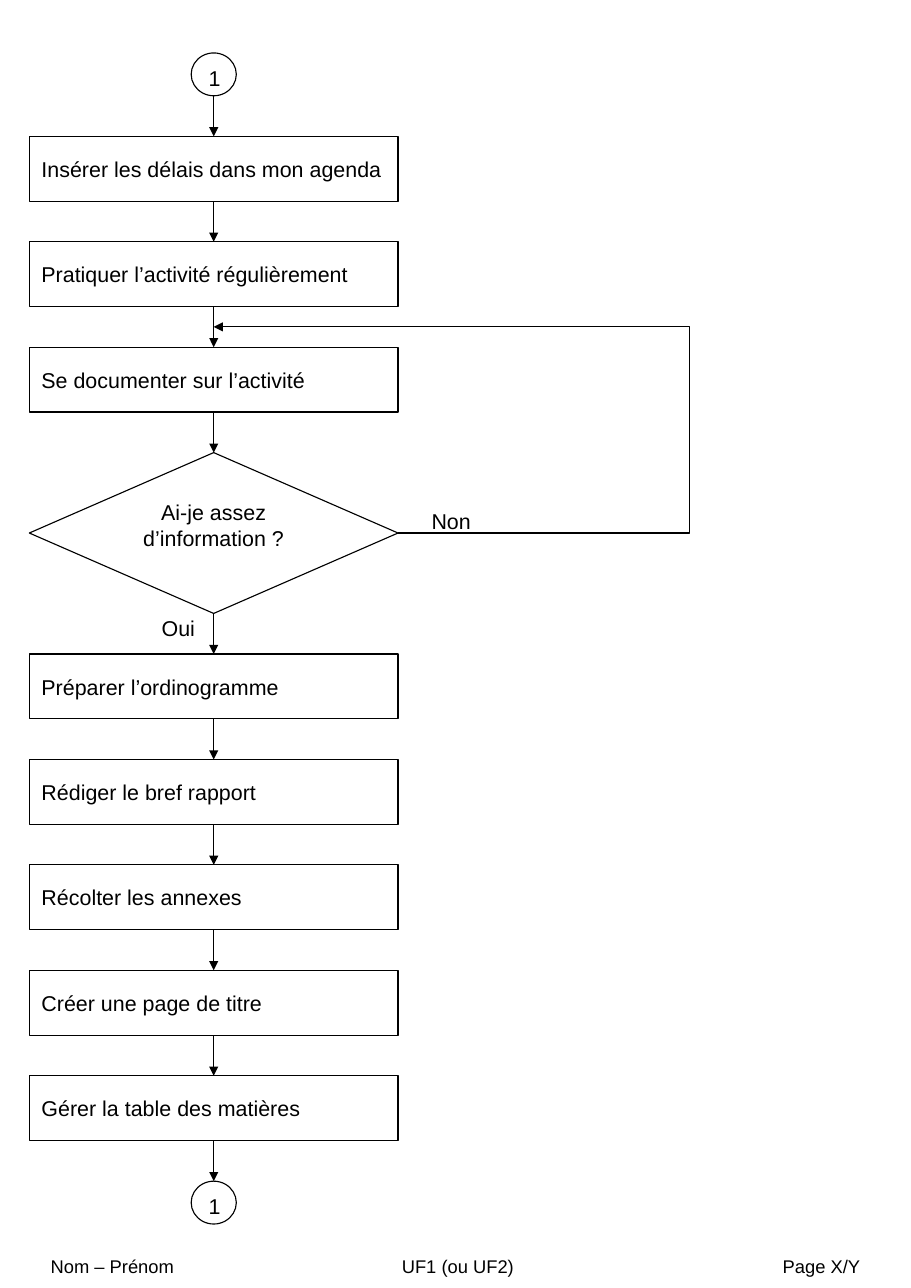
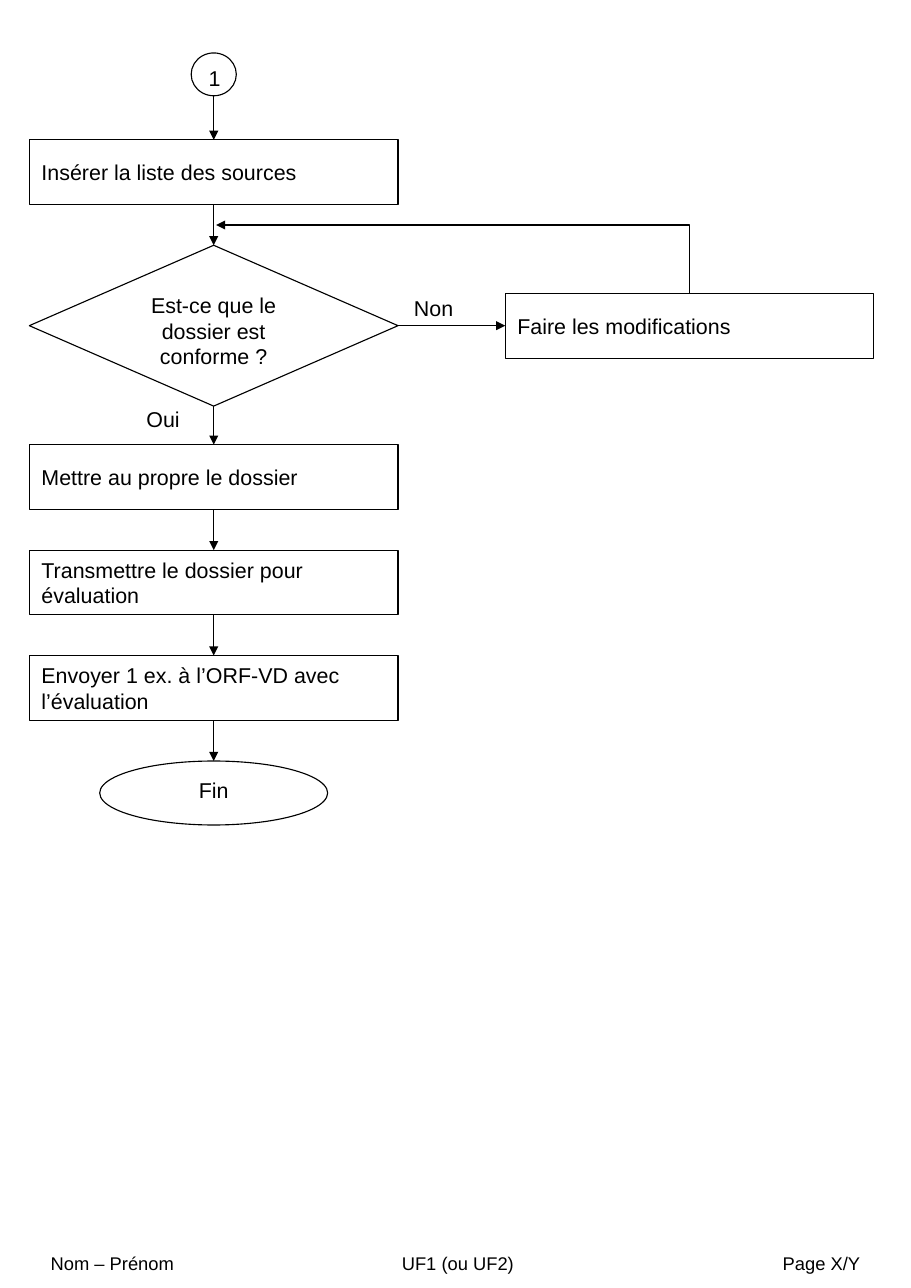
from lxml import etree
from pptx import Presentation
from pptx.dml.color import RGBColor
from pptx.enum import shapes, text
from pptx.oxml.ns import qn
from pptx.util import Pt

BLACK = RGBColor(0, 0, 0)
WHITE = RGBColor(255, 255, 255)
FONT = "Arial"
CENTER = 139.7          # axis of the main flow
GAP = 26.5              # usual distance between two steps
LOOP_X = 450.7          # vertical part of the return loops
BOX_W, BOX_H = 241, 42.4

S = shapes.MSO_SHAPE
# kind: preset, width, height, alignment, anchor, wide insets
KINDS = {
    "link": (S.FLOWCHART_CONNECTOR, 29.5, 28, text.PP_ALIGN.CENTER, text.MSO_ANCHOR.TOP, False),
    "box": (S.RECTANGLE, BOX_W, BOX_H, text.PP_ALIGN.LEFT, text.MSO_ANCHOR.MIDDLE, True),
    "test": (S.FLOWCHART_DECISION, BOX_W, 105.1, text.PP_ALIGN.CENTER, text.MSO_ANCHOR.TOP, True),
    "end": (S.OVAL, 149, 41.8, text.PP_ALIGN.CENTER, text.MSO_ANCHOR.TOP, True),
}

# Each step: kind, wording, distance from the step above
PAGES = [
    {
        "steps": [
            ("link", "1", 34.6),
            ("box", "Insérer les délais dans mon agenda", GAP),
            ("box", "Pratiquer l’activité régulièrement", GAP),
            ("box", "Se documenter sur l’activité", GAP),
            ("test", "Ai-je assez d’information ?", GAP),
            ("box", "Préparer l’ordinogramme", GAP),
            ("box", "Rédiger le bref rapport", GAP),
            ("box", "Récolter les annexes", GAP),
            ("box", "Créer une page de titre", GAP),
            ("box", "Gérer la table des matières", GAP),
            ("link", "1", GAP),
        ],
        "labels": [("Oui", 98.6, 398.2), ("Non", 275, 328.3)],
        "footer_top": 812.2,
    },
    {
        "steps": [
            ("link", "1", 34.6),
            ("box", "Insérer la liste des sources", 28.8),
            ("test", "Est-ce que le dossier est conforme ?", GAP),
            ("box", "Mettre au propre le dossier", 25.2),
            ("box", "Transmettre le dossier pour évaluation", GAP),
            ("box", "Envoyer 1 ex. à l’ORF-VD avec l’évaluation", GAP),
            ("end", "Fin", GAP),
        ],
        "labels": [("Oui", 88.6, 262.1), ("Non", 263.5, 189.4)],
        "footer_top": 810.7,
    },
]


def add_text(sp, wording, size=14, align=text.PP_ALIGN.LEFT,
             anchor=text.MSO_ANCHOR.TOP, wide=False):
    tf = sp.text_frame
    tf.word_wrap = True
    tf.vertical_anchor = anchor
    if wide:
        tf.margin_left = tf.margin_right = Pt(7.9)
        tf.margin_top = tf.margin_bottom = Pt(4.3)
    p = tf.paragraphs[0]
    p.text = wording
    p.alignment = align
    p.font.name, p.font.size = FONT, Pt(size)
    p.font.color.rgb = BLACK
    return p


def add_arrow(s, kind, x1, y1, x2, y2):
    c = s.shapes.add_connector(kind, Pt(x1), Pt(y1), Pt(x2), Pt(y2))
    c.line.color.rgb = BLACK
    c.line.width = Pt(0.75)
    etree.SubElement(c.line._get_or_add_ln(), qn("a:tailEnd"), type="triangle")
    etree.SubElement(c._element.spPr, qn("a:effectLst"))
    return c


prs = Presentation()
prs.slide_width, prs.slide_height = Pt(595.44), Pt(841.68)
STRAIGHT, ELBOW = shapes.MSO_CONNECTOR.STRAIGHT, shapes.MSO_CONNECTOR.ELBOW

flows = []
for page in PAGES:
    s = prs.slides.add_slide(prs.slide_layouts[6])

    # Steps down the axis, plus the correction box beside the second page's test
    places = []
    y = 0
    for kind, wording, gap in page["steps"]:
        y += gap
        places.append((kind, wording, CENTER, y))
        y += KINDS[kind][2]
    if page is PAGES[1]:
        test_y = places[2][3] + KINDS["test"][2] / 2
        places.append(("box", "Faire les modifications", LOOP_X, test_y - BOX_H / 2))

    nodes = []
    for kind, wording, x, top in places:
        preset, w, h, align, anchor, wide = KINDS[kind]
        sp = s.shapes.add_shape(preset, Pt(x - w / 2), Pt(top), Pt(w), Pt(h))
        sp.shadow.inherit = False
        sp.fill.solid()
        sp.fill.fore_color.rgb = WHITE
        sp.line.color.rgb = BLACK
        sp.line.width = Pt(0.75)
        add_text(sp, wording, 14, align, anchor, wide)
        nodes.append(sp)
    flows.append((s, nodes))

    # Arrows between consecutive steps
    for i in range(1, len(page["steps"])):
        above, below = nodes[i - 1], nodes[i]
        c = add_arrow(s, STRAIGHT, CENTER, (above.top + above.height).pt
                      if hasattr(above.top + above.height, "pt")
                      else (above.top + above.height) / Pt(1), CENTER, below.top.pt)
        if page["steps"][i - 1][0] != "link":
            c.begin_connect(above, 2)
        c.end_connect(below, 0)

    # Answers of the test
    for wording, x, top in page["labels"]:
        add_text(s.shapes.add_textbox(Pt(x), Pt(top), Pt(50), Pt(20)), wording)

    # Footer with a centred and a right tab stop
    sp = s.shapes.add_textbox(Pt(25.2), Pt(page["footer_top"]), Pt(555.8), Pt(30))
    p = add_text(sp, "Nom – Prénom\tUF1 (ou UF2)\tPage X/Y", 12,
                 anchor=text.MSO_ANCHOR.MIDDLE, wide=True)
    tabs = etree.Element(qn("a:tabLst"))
    for pos, side in ((266.2, "ctr"), (529.2, "r")):
        etree.SubElement(tabs, qn("a:tab"), pos=str(Pt(pos)), algn=side)
    p_pr = p._p.get_or_add_pPr()
    p_pr.insert(0, tabs)
    fonts = p_pr.find(qn("a:defRPr"))
    if fonts is not None:
        fonts.addprevious(tabs)

# First page: loop from the test back above the documentation step
s, nodes = flows[0]
test = nodes[4]
right = CENTER + BOX_W / 2
c = add_arrow(s, ELBOW, right, test.top.pt + test.height.pt / 2,
              CENTER, nodes[3].top.pt - GAP / 2)
c.begin_connect(test, 3)
bend = round((right - LOOP_X) / (right - CENTER) * 100000)
geom = c._element.spPr.find(qn("a:prstGeom"))
etree.SubElement(geom.find(qn("a:avLst")), qn("a:gd"), name="adj1", fmla=f"val {bend}")

# Second page: from the test to the correction box
s, nodes = flows[1]
test, fix = nodes[2], nodes[-1]
c = add_arrow(s, STRAIGHT, right, test_y, LOOP_X - BOX_W / 2, test_y)
c.begin_connect(test, 3)
c.end_connect(fix, 1)

# Second page: one-bend loop, up from the correction box and left to the axis
end_x, end_y = CENTER + 1.5, test.top.pt - GAP / 2
c = add_arrow(s, ELBOW, LOOP_X, fix.top.pt, end_x, end_y)
c.begin_connect(fix, 0)
rise, run = fix.top.pt - end_y, LOOP_X - end_x
c.left, c.top = Pt((LOOP_X + end_x - rise) / 2), Pt((fix.top.pt + end_y - run) / 2)
c.width, c.height = Pt(rise), Pt(run)
xfrm = c._element.spPr.find(qn("a:xfrm"))
xfrm.attrib.pop("flipH", None)
xfrm.set("flipV", "1")
xfrm.set("rot", str(270 * 60000))
c._element.spPr.find(qn("a:prstGeom")).set("prst", "bentConnector2")

prs.save("out.pptx")
